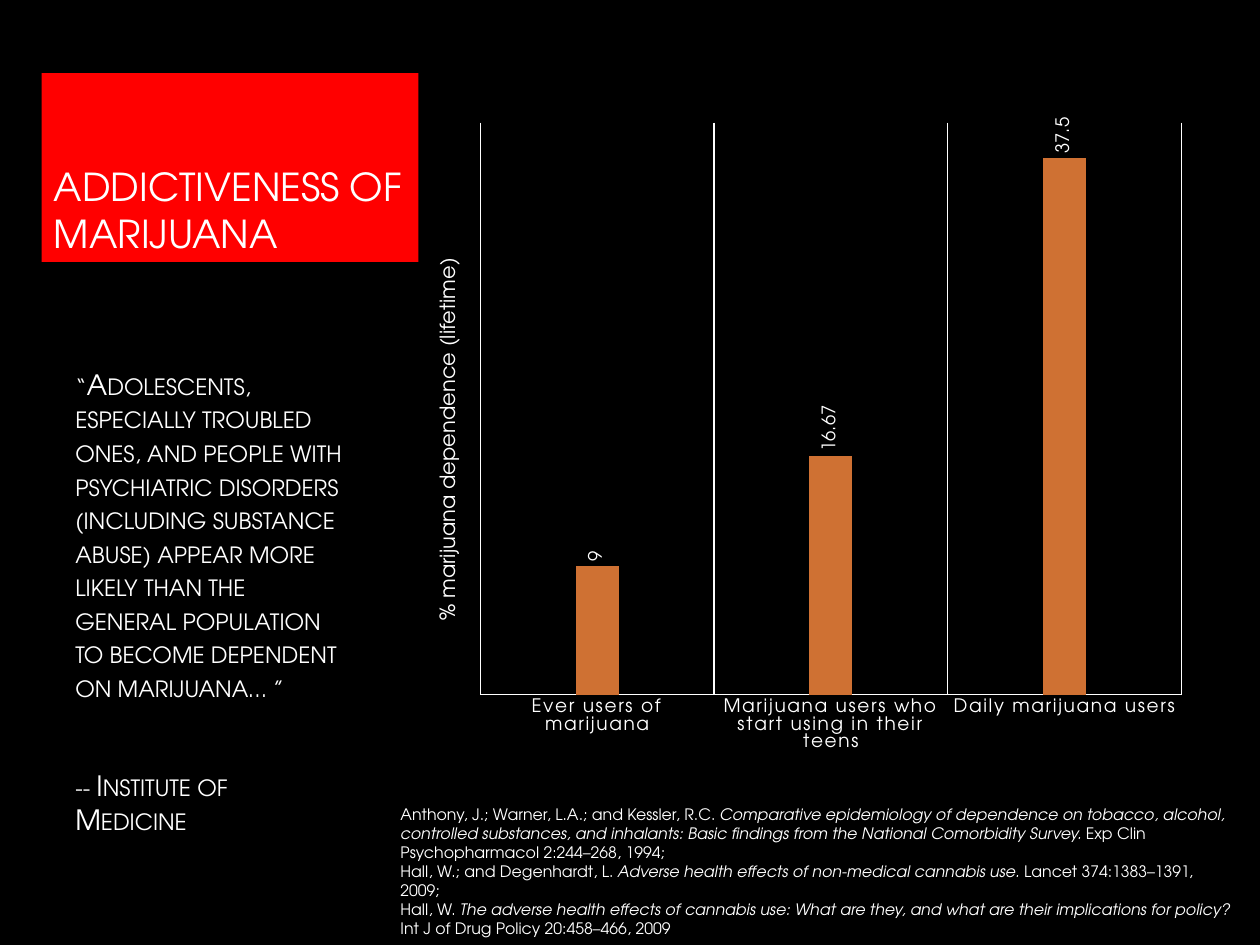
from dataclasses import dataclass

from lxml import etree
from pptx import Presentation
from pptx.chart.data import CategoryChartData
from pptx.dml.color import RGBColor
from pptx.enum import chart as ch, shapes, text
from pptx.oxml import ns
from pptx.util import Inches, Pt


@dataclass(frozen=True)
class Theme:
    font: str = "TeX Gyre Adventor"
    black: RGBColor = RGBColor(0, 0, 0)
    white: RGBColor = RGBColor(255, 255, 255)
    red: RGBColor = RGBColor(255, 0, 0)
    bar: RGBColor = RGBColor(0xCF, 0x71, 0x33)
    title: float = 22
    quote: float = 16
    note: float = 9
    axis: float = 12
    label: float = 10.6
    line: float = 0.75


class Deck:
    def __init__(self, theme):
        self.theme = theme
        self.prs = Presentation()
        self.prs.slide_width, self.prs.slide_height = Inches(10), Inches(7.5)
        self.slide = self.prs.slides.add_slide(self.prs.slide_layouts[6])
        fill = self.slide.background.fill
        fill.solid()
        fill.fore_color.rgb = theme.black

    def style(self, font, size):
        font.name = self.theme.font
        font.size = Pt(size)
        font.bold = False
        font.color.rgb = self.theme.white

    def stroke(self, line):
        line.color.rgb = self.theme.white
        line.width = Pt(self.theme.line)

    def title(self, words, box):
        shape = self.slide.shapes.add_shape(
            shapes.MSO_SHAPE.RECTANGLE, *map(Inches, box))
        shape.shadow.inherit = False
        shape.fill.solid()
        shape.fill.fore_color.rgb = self.theme.red
        shape.line.fill.background()
        frame = shape.text_frame
        frame.word_wrap = True
        frame.vertical_anchor = text.MSO_ANCHOR.BOTTOM
        frame.text = words
        para = frame.paragraphs[0]
        para.alignment = text.PP_ALIGN.LEFT
        self.style(para.runs[0].font, self.theme.title)

    def frame(self, box):
        frame = self.slide.shapes.add_textbox(*map(Inches, box)).text_frame
        frame.word_wrap = True
        return frame

    def quote(self, words, source, box):
        frame = self.frame(box)
        frame.vertical_anchor = text.MSO_ANCHOR.MIDDLE
        frame.text = f"{words}\n{source}"
        for para in frame.paragraphs:
            para.space_after = Pt(6)
            font = para.runs[0].font
            self.style(font, self.theme.quote)
            para.runs[0]._r.get_or_add_rPr().set("cap", "small")
        frame.paragraphs[1].space_before = Pt(31.5)

    def notes(self, cites, box):
        """Each citation is authors, work in italics, and place."""
        frame = self.frame(box)
        for num, cite in enumerate(cites):
            para = frame.add_paragraph() if num else frame.paragraphs[0]
            for part, words in enumerate(cite):
                run = para.add_run()
                run.text = words
                self.style(run.font, self.theme.note)
                run.font.italic = part == 1

    def place(self, parent, spot, **sizes):
        """Fix a chart part by shares of the chart area."""
        for old in parent.findall(ns.qn("c:layout")):
            parent.remove(old)
        layout = etree.Element(ns.qn("c:layout"))
        parent.insert(spot, layout)
        manual = etree.SubElement(layout, ns.qn("c:manualLayout"))
        modes = {"xMode": "edge", "yMode": "edge"}
        if "w" in sizes:
            modes = {"layoutTarget": "inner", **modes}
        for tag, val in {**modes, **sizes}.items():
            etree.SubElement(manual, ns.qn(f"c:{tag}")).set("val", str(val))

    def chart(self, names, vals, label, box):
        theme = self.theme
        data = CategoryChartData()
        data.categories = names
        data.add_series("Series 1", vals)
        chart = self.slide.shapes.add_chart(
            ch.XL_CHART_TYPE.COLUMN_CLUSTERED, *map(Inches, box), data).chart
        self.style(chart.font, 10)
        chart.has_legend = False
        chart.has_title = False
        self.place(chart._chartSpace.chart.plotArea, 0,
                   x=0.09, y=0.02, w=0.89, h=0.87)
        self.bars(chart.plots[0])

        cat, val = chart.category_axis, chart.value_axis
        for axis in (cat, val):
            axis.major_tick_mark = axis.minor_tick_mark = ch.XL_TICK_MARK.NONE
            self.stroke(axis.format.line)
        cat.has_major_gridlines = True
        self.stroke(cat.major_gridlines.format.line)
        self.style(cat.tick_labels.font, theme.label)
        cat.tick_labels.font._element.set("spc", "100")

        val.has_major_gridlines = False
        val.minimum_scale, val.maximum_scale = 0, 40
        val.tick_label_position = ch.XL_TICK_LABEL_POSITION.NONE
        frame = val.axis_title.text_frame
        frame.text = label
        frame._txBody.bodyPr.set("rot", "-5400000")
        frame._txBody.bodyPr.set("vert", "horz")
        self.style(frame.paragraphs[0].runs[0].font, theme.axis)
        self.place(val.axis_title._element, 1, x=0.03, y=0.22)

    def bars(self, plot):
        plot.gap_width, plot.overlap = 444, -90
        plot.vary_by_categories = False
        fill = plot.series[0].format.fill
        fill.solid()
        fill.fore_color.rgb = self.theme.bar
        plot.has_data_labels = True
        labels = plot.data_labels
        labels.show_value = True
        labels.position = ch.XL_LABEL_POSITION.OUTSIDE_END
        self.style(labels.font, self.theme.label)
        body = labels._element.find(ns.qn("c:txPr")).find(ns.qn("a:bodyPr"))
        body.set("rot", "-5400000")
        body.set("vert", "horz")


def main():
    deck = Deck(Theme())
    deck.title("ADDICTIVENESS OF MARIJUANA", (0.33, 0.58, 2.99, 1.5))
    deck.chart(
        ["Ever users of marijuana",
         "Marijuana users who start using in their teens",
         "Daily marijuana users"],
        [9, 16.67, 37.5],
        "% marijuana dependence (lifetime)", (3.25, 0.87, 6.25, 5.22))
    deck.quote(
        "“Adolescents, especially troubled ones, and people with psychiatric "
        "disorders (including substance abuse) appear more likely than the "
        "general population to become dependent on marijuana… ”",
        "-- Institute of Medicine", (0.5, 2.58, 2.34, 4.39))
    deck.notes([
        ("Anthony, J.; Warner, L.A.; and Kessler, R.C. ",
         "Comparative epidemiology of dependence on tobacco, alcohol, "
         "controlled substances, and inhalants: Basic findings from the "
         "National Comorbidity Survey. ",
         "Exp Clin Psychopharmacol 2:244–268, 1994;"),
        ("Hall, W.; and Degenhardt, L. ",
         "Adverse health effects of non-medical cannabis use. ",
         "Lancet 374:1383–1391, 2009;"),
        ("Hall, W. ",
         "The adverse health effects of cannabis use: What are they, and "
         "what are their implications for policy? ",
         "Int J of Drug Policy 20:458–466, 2009"),
    ], (3.08, 6.34, 6.79, 1.16))
    deck.prs.save("out.pptx")


if __name__ == "__main__":
    main()
